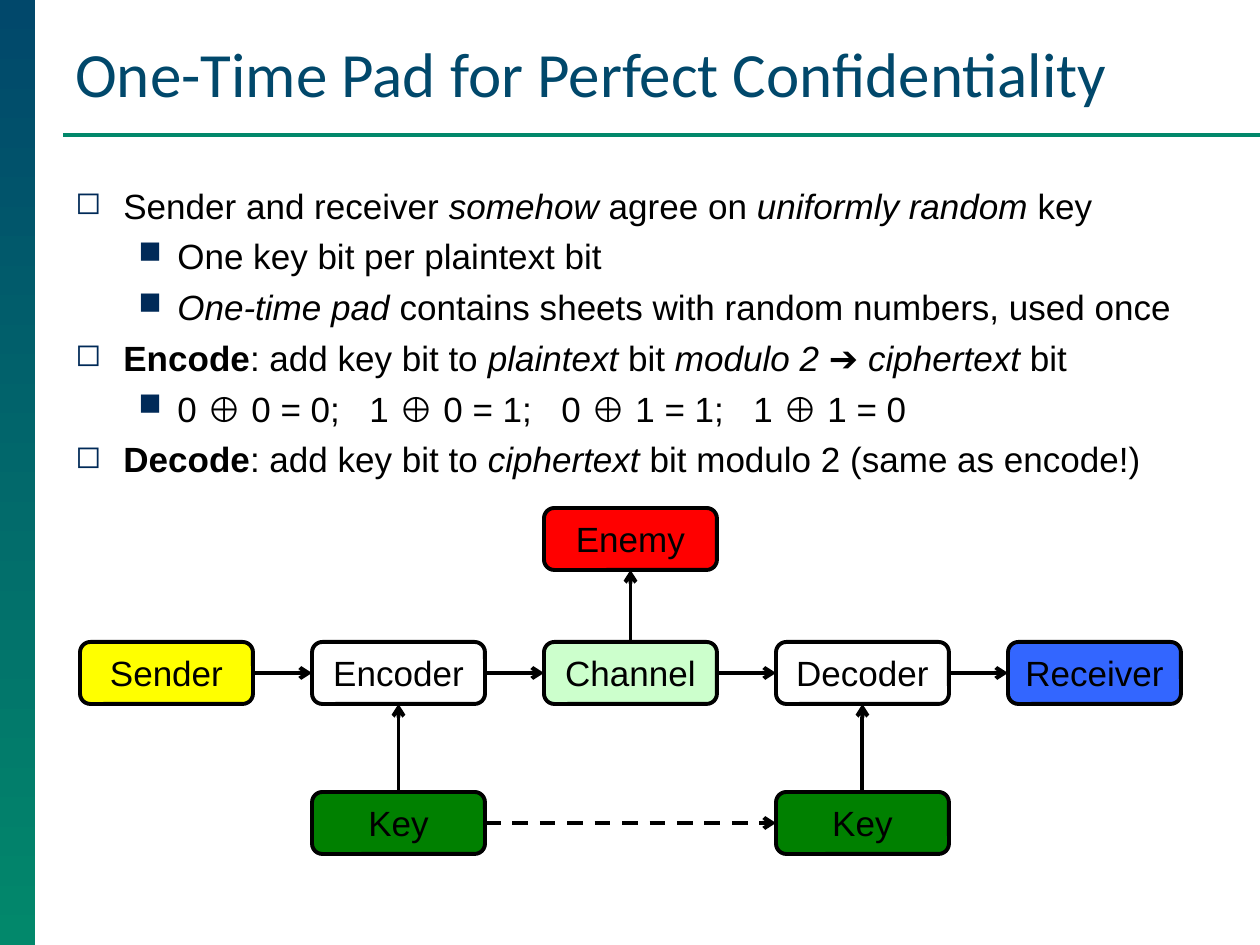
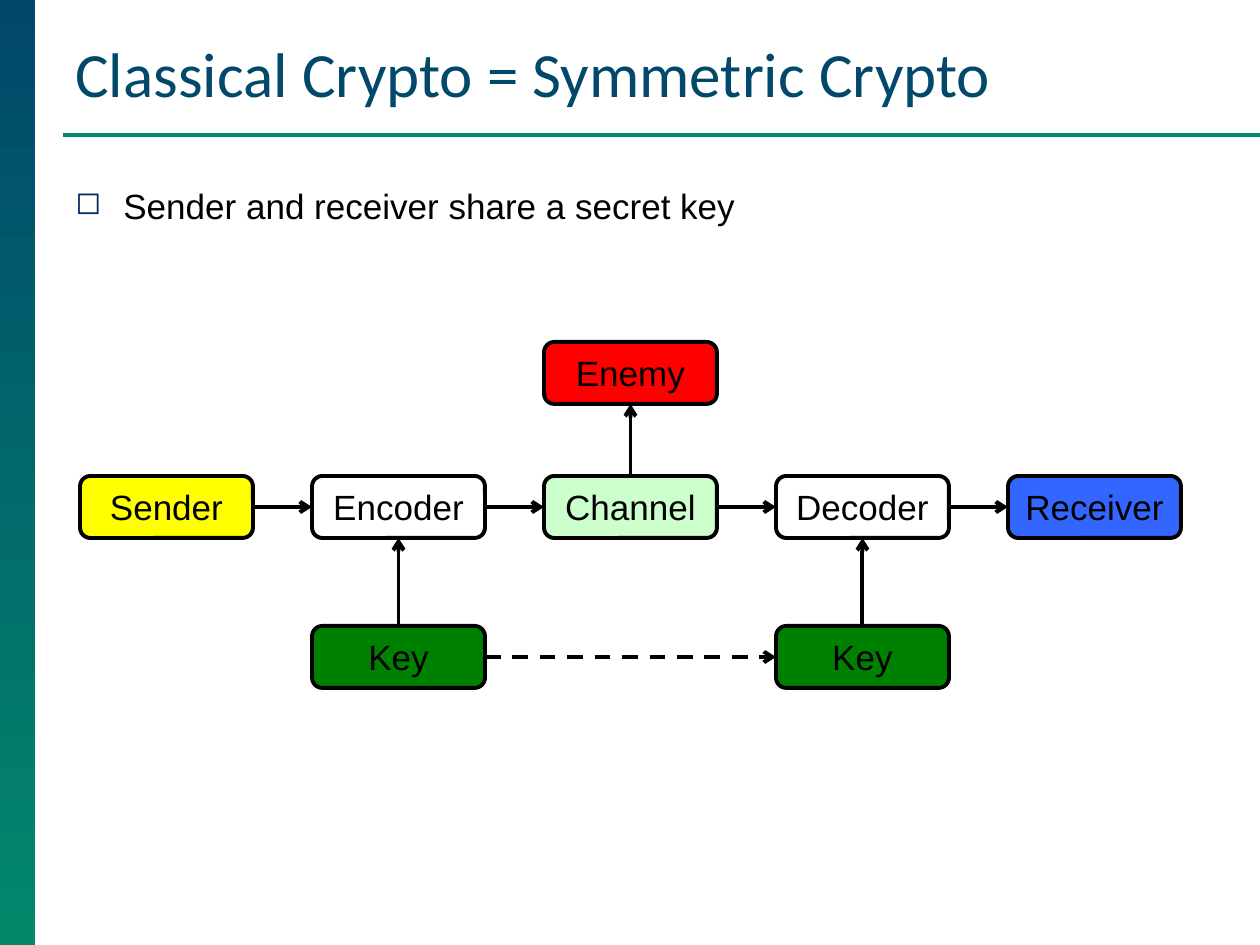
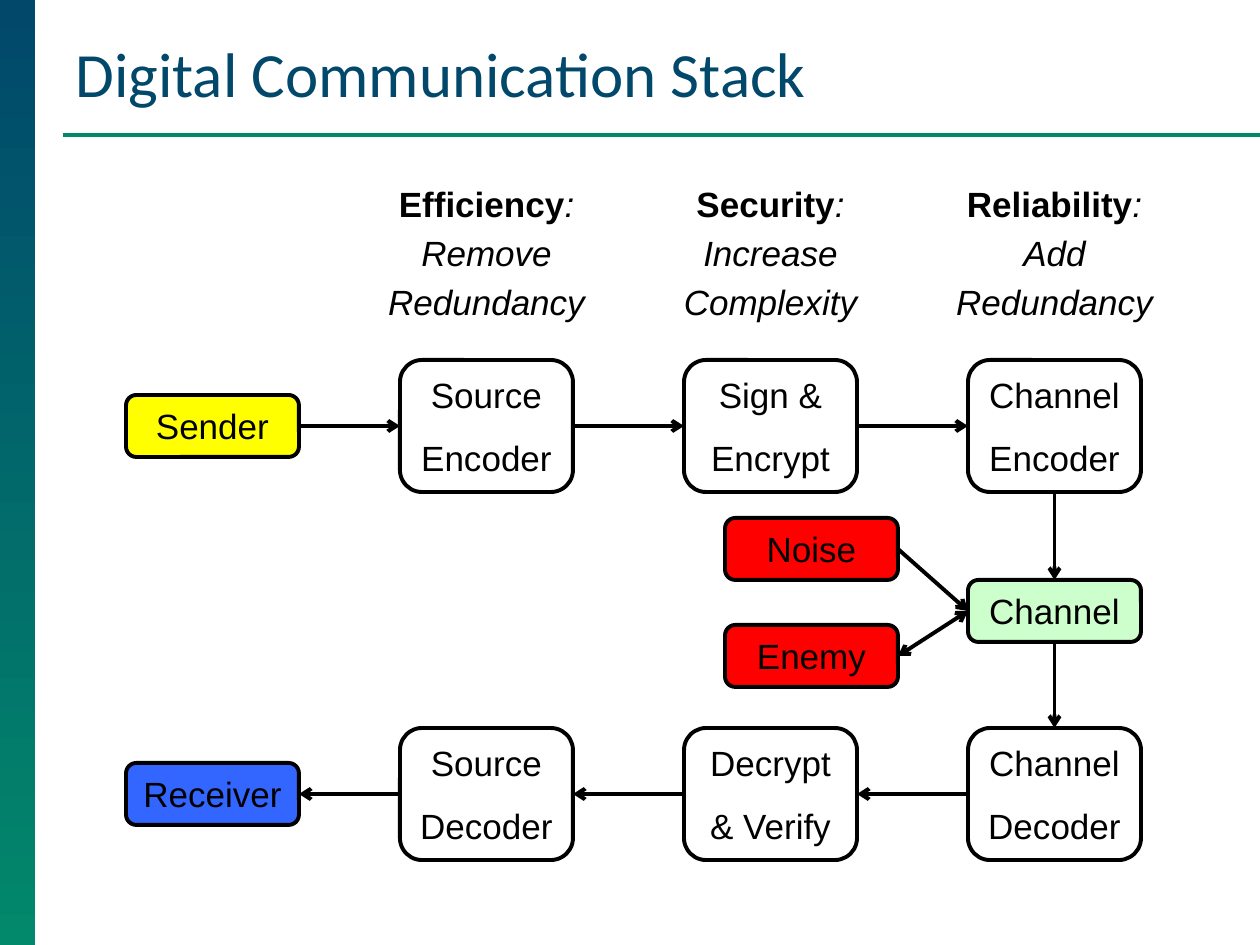
"""Build three slides on encryption and the digital communication stack."""
from lxml.etree import SubElement
from pptx import Presentation
from pptx.dml.color import RGBColor
from pptx.enum.dml import MSO_LINE
from pptx.enum.shapes import MSO_CONNECTOR, MSO_SHAPE
from pptx.enum.text import MSO_ANCHOR, PP_ALIGN
from pptx.oxml.ns import qn
from pptx.util import Emu, Pt

COLORS = {name: RGBColor.from_string(value) for name, value in {
    "navy": "01486B", "teal": "02886B", "bullet": "002A58", "black": "000000",
    "white": "FFFFFF", "yellow": "FFFF00", "blue": "3366FF", "mint": "CCFFCC",
    "red": "FF0000", "green": "008000",
}.items()}
PX = 914400 / 126
TOP, LEFT, BOTTOM, RIGHT = range(4)
BOX_WIDTH, BOX_HEIGHT, TALL_HEIGHT = 173, 62, 132


def add_box(slide, text, left, top, color, height=BOX_HEIGHT):
    """Add a rounded box with one centred paragraph per line of text."""
    box = slide.shapes.add_shape(
        MSO_SHAPE.ROUNDED_RECTANGLE,
        *(Emu(round(length * PX)) for length in (left, top, BOX_WIDTH, height)))
    box.shadow.inherit = False
    box.fill.solid()
    box.fill.fore_color.rgb = COLORS[color]
    box.line.color.rgb = COLORS["black"]
    box.line.width = Pt(2.25)
    box.text_frame.text = text
    box.text_frame.vertical_anchor = MSO_ANCHOR.MIDDLE
    for index, paragraph in enumerate(box.text_frame.paragraphs):
        paragraph.alignment = PP_ALIGN.CENTER
        if index:
            paragraph.space_before = Pt(11.5)
        paragraph.font.name = "Arial"
        paragraph.font.size = Pt(20)
        paragraph.font.color.rgb = COLORS["black"]
    return box


def add_arrow(slide, source, source_side, target, target_side, dashed=False, both_ends=False):
    """Join two boxes with an arrow that points at the target."""
    arrow = slide.shapes.add_connector(MSO_CONNECTOR.STRAIGHT, 0, 0, 0, 0)
    arrow.begin_connect(source, source_side)
    arrow.end_connect(target, target_side)
    arrow.line.color.rgb = COLORS["black"]
    arrow.line.width = Pt(2.25)
    if dashed:
        arrow.line.dash_style = MSO_LINE.DASH
    line = arrow.line._get_or_add_ln()
    for end in ["headEnd", "tailEnd"] if both_ends else ["tailEnd"]:
        SubElement(line, qn(f"a:{end}"), type="arrow")
    SubElement(arrow._element.spPr, qn("a:effectLst"))


presentation = Presentation()
presentation.slide_width = Emu(round(1260 * PX))
presentation.slide_height = Emu(round(945 * PX))

slides = []
for title in ["One-Time Pad for Perfect Confidentiality",
              "Classical Crypto = Symmetric Crypto",
              "Digital Communication Stack"]:
    slide = presentation.slides.add_slide(presentation.slide_layouts[6])
    slides.append(slide)

    band = slide.shapes.add_shape(
        MSO_SHAPE.RECTANGLE, 0, 0, Emu(round(35 * PX)), presentation.slide_height)
    band.shadow.inherit = False
    band.line.fill.background()
    band.fill.gradient()
    band.fill.gradient_angle = 270
    for stop, color, position in zip(band.fill.gradient_stops, ["navy", "teal"], [0, 1]):
        stop.color.rgb = COLORS[color]
        stop.position = position

    rule = slide.shapes.add_connector(
        MSO_CONNECTOR.STRAIGHT,
        *(Emu(round(length * PX)) for length in (63, 135, 1260, 135)))
    rule.line.color.rgb = COLORS["teal"]
    rule.line.width = Pt(2.25)
    SubElement(rule._element.spPr, qn("a:effectLst"))

    title_box = slide.shapes.add_textbox(
        *(Emu(round(length * PX)) for length in (63, 27, 1169, 89)))
    title_box.text_frame.word_wrap = True
    title_box.text_frame.vertical_anchor = MSO_ANCHOR.BOTTOM
    paragraph = title_box.text_frame.paragraphs[0]
    paragraph.text = title
    paragraph.font.name = "Calibri"
    paragraph.font.size = Pt(36)
    paragraph.font.color.rgb = COLORS["navy"]

pad_slide, symmetric_slide, stack_slide = slides

pad_bullets = [
    (0, [("Sender and receiver ", ""), ("somehow", "i"), (" agree on ", ""),
         ("uniformly random", "i"), (" key", "")]),
    (1, [("One key bit per plaintext bit", "")]),
    (1, [("One-time pad ", "i"), ("contains sheets with random numbers, used once", "")]),
    (0, [("Encode", "b"), (": add key bit to ", ""), ("plaintext", "i"), (" bit ", ""),
         ("modulo 2", "i"), (" ➔ ", ""), ("ciphertext", "i"), (" bit", "")]),
    (1, [("0 ⊕ 0 = 0;\t1 ⊕ 0 = 1;\t0 ⊕ 1 = 1;\t1 ⊕ 1 = 0", "")]),
    (0, [("Decode", "b"), (": add key bit to ", ""), ("ciphertext", "i"),
         (" bit modulo 2 (same as encode!)", "")]),
]
symmetric_bullets = [(0, [("Sender and receiver share a secret key", "")])]
BULLET_LEVELS = [("◻", 48, -48), ("■", 102, -39)]

for slide, bullets, row_top in [(pad_slide, pad_bullets, 642),
                                (symmetric_slide, symmetric_bullets, 476)]:
    body = slide.shapes.add_textbox(
        *(Emu(round(length * PX)) for length in (63, 178, 1124, 49 * len(bullets) + 12)))
    body.text_frame.word_wrap = True
    for index, (level, runs) in enumerate(bullets):
        paragraph = body.text_frame.paragraphs[0] if index == 0 else body.text_frame.add_paragraph()
        paragraph.level = level
        if index:
            paragraph.space_before = Pt(5)
        character, margin, indent = BULLET_LEVELS[level]
        properties = paragraph._p.get_or_add_pPr()
        properties.set("marL", str(round(margin * PX)))
        properties.set("indent", str(round(indent * PX)))
        bullet_color = SubElement(properties, qn("a:buClr"))
        SubElement(bullet_color, qn("a:srgbClr"), val=str(COLORS["bullet"]))
        SubElement(properties, qn("a:buSzPct"), val="90000")
        SubElement(properties, qn("a:buChar"), char=character)
        if any("\t" in text for text, style in runs):
            tabs = SubElement(properties, qn("a:tabLst"))
            for column in range(1, 4):
                SubElement(tabs, qn("a:tab"), pos=str(round((102 + 192 * column) * PX)), algn="l")
        paragraph.font.name = "Arial"
        paragraph.font.size = Pt(20)
        paragraph.font.color.rgb = COLORS["black"]
        for text, style in runs:
            run = paragraph.add_run()
            run.text = text
            if style == "i":
                run.font.italic = True
            elif style == "b":
                run.font.bold = True

    sender, encoder, channel, decoder, receiver = chain = [
        add_box(slide, text, 80 + 232 * column, row_top, color)
        for column, (text, color) in enumerate([
            ("Sender", "yellow"), ("Encoder", "white"), ("Channel", "mint"),
            ("Decoder", "white"), ("Receiver", "blue")])]
    enemy = add_box(slide, "Enemy", 544, row_top - 134, "red")
    sender_key, receiver_key = [
        add_box(slide, "Key", left, row_top + 150, "green") for left in (312, 776)]
    for source, target in zip(chain, chain[1:]):
        add_arrow(slide, source, RIGHT, target, LEFT)
    add_arrow(slide, channel, TOP, enemy, BOTTOM)
    add_arrow(slide, sender_key, TOP, encoder, BOTTOM)
    add_arrow(slide, receiver_key, TOP, decoder, BOTTOM)
    add_arrow(slide, sender_key, RIGHT, receiver_key, LEFT, dashed=True)

sending = [add_box(stack_slide, "Sender", 126, 395, "yellow")]
receiving = [add_box(stack_slide, "Receiver", 126, 763, "blue")]
for column, (goal, means, encoder_text, decoder_text) in enumerate([
        ("Efficiency", ["Remove", "Redundancy"], "Source\nEncoder", "Source\nDecoder"),
        ("Security", ["Increase", "Complexity"], "Sign &\nEncrypt", "Decrypt\n& Verify"),
        ("Reliability", ["Add", "Redundancy"], "Channel\nEncoder", "Channel\nDecoder")]):
    left = 400 + 284 * column
    sending.append(add_box(stack_slide, encoder_text, left, 360, "white", TALL_HEIGHT))
    receiving.append(add_box(stack_slide, decoder_text, left, 728, "white", TALL_HEIGHT))

    heading = stack_slide.shapes.add_textbox(
        *(Emu(round(length * PX)) for length in (left - 30, 176, 233, 146)))
    heading.text_frame.word_wrap = True
    heading.text_frame.text = "\n".join([goal, *means])
    for index, paragraph in enumerate(heading.text_frame.paragraphs):
        paragraph.alignment = PP_ALIGN.CENTER
        if index:
            paragraph.space_before = Pt(4)
        paragraph.font.name = "Arial"
        paragraph.font.size = Pt(20)
        paragraph.font.color.rgb = COLORS["black"]
        if index == 0:
            paragraph.runs[0].font.bold = True
            paragraph.add_run().text = ":"
        paragraph.runs[-1].font.italic = True

channel = add_box(stack_slide, "Channel", 968, 580, "mint")
noise = add_box(stack_slide, "Noise", 725, 518, "red")
enemy = add_box(stack_slide, "Enemy", 725, 625, "red")
for source, target in zip(sending, sending[1:]):
    add_arrow(stack_slide, source, RIGHT, target, LEFT)
for target, source in zip(receiving, receiving[1:]):
    add_arrow(stack_slide, source, LEFT, target, RIGHT)
add_arrow(stack_slide, sending[-1], BOTTOM, channel, TOP)
add_arrow(stack_slide, channel, BOTTOM, receiving[-1], TOP)
add_arrow(stack_slide, noise, RIGHT, channel, LEFT)
add_arrow(stack_slide, enemy, RIGHT, channel, LEFT, both_ends=True)

presentation.save("out.pptx")
